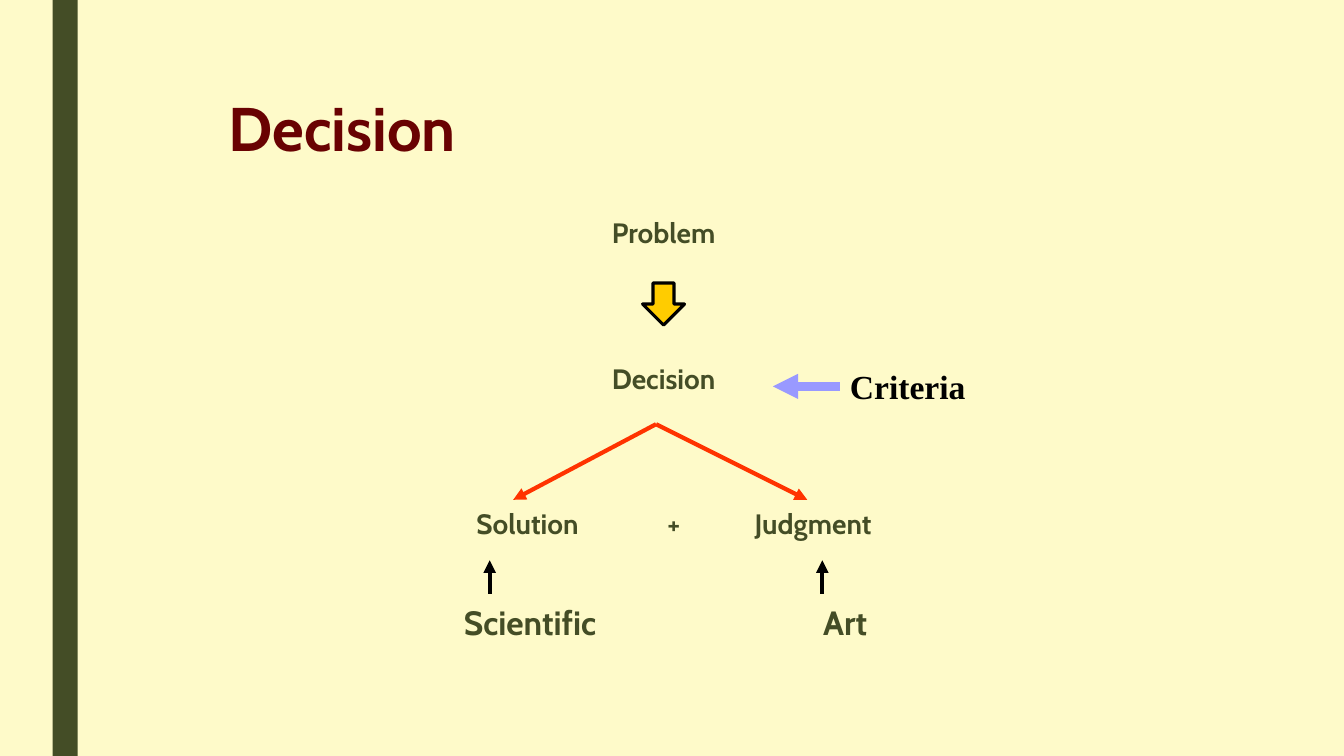
from lxml.etree import SubElement
from pptx import Presentation
from pptx.dml.color import RGBColor as Rgb
from pptx.enum.shapes import MSO_CONNECTOR as Connector, MSO_SHAPE as Shape
from pptx.enum.text import MSO_ANCHOR as Anchor, PP_ALIGN as Align
from pptx.oxml.ns import qn
from pptx.util import Inches, Pt

COLORS = {"paper": "FEFAC9", "olive": "444D26", "maroon": "690202", "gold": "FFCC00",
          "red": "FF3300", "black": "000000", "lilac": "9999FF"}

deck = Presentation()
deck.slide_width, deck.slide_height = Inches(13.33), Inches(7.5)
slide = deck.slides.add_slide(deck.slide_layouts[6])
slide.background.fill.solid()
slide.background.fill.fore_color.rgb = Rgb.from_string(COLORS["paper"])

# Grid of 160 columns by 90 rows
COL, ROW = deck.slide_width / 160, deck.slide_height / 90


def add_label(words, left, top, width, height, size, color, align=Align.CENTER, font="Cabin"):
    label = slide.shapes.add_textbox(int(left * COL), int(top * ROW),
                                     int(width * COL), int(height * ROW))
    frame = label.text_frame
    frame.word_wrap = True
    frame.vertical_anchor = Anchor.MIDDLE
    frame.paragraphs[0].alignment = align
    run = frame.paragraphs[0].add_run()
    run.text = words
    run.font.name, run.font.size, run.font.bold = font, Pt(size), True
    run.font.color.rgb = Rgb.from_string(COLORS[color])
    return label


def add_arrow(start, end, color, weight):
    arrow = slide.shapes.add_connector(
        Connector.STRAIGHT, int(start[0] * COL), int(start[1] * ROW),
        int(end[0] * COL), int(end[1] * ROW))
    arrow.line.color.rgb = Rgb.from_string(COLORS[color])
    arrow.line.width = Pt(weight)
    SubElement(arrow.line._get_or_add_ln(), qn("a:tailEnd"), type="triangle")
    SubElement(arrow._element.spPr, qn("a:effectLst"))
    return arrow


# Side band
band = slide.shapes.add_shape(Shape.RECTANGLE, int(6.25 * COL), 0, int(3 * COL), deck.slide_height)
band.shadow.inherit = False
band.fill.solid()
band.fill.fore_color.rgb = Rgb.from_string(COLORS["olive"])
band.line.fill.background()

# Title
add_label("Decision", 26, 10.8, 108, 8.6, 44, "maroon", Align.LEFT)

# Steps of the decision: words, centre column, centre row, size
FIRST, PITCH = 27.7, 17.3
SOURCES = 74.1
steps = [
    ("Problem", 79, FIRST, 20),
    ("Decision", 79, FIRST + PITCH, 20),
    ("Solution", 62.8, FIRST + 2 * PITCH, 20),
    ("+", 80.2, FIRST + 2 * PITCH, 20),
    ("Judgment", 96.8, FIRST + 2 * PITCH, 20),
    ("Scientific", 63.1, SOURCES, 24),
    ("Art", 100.6, SOURCES, 24),
]
STEP_W, STEP_H = 24, 6
for words, center, middle, size in steps:
    add_label(words, center - STEP_W / 2, middle - STEP_H / 2, STEP_W, STEP_H, size, "olive")

# Block arrow from problem to decision
block = slide.shapes.add_shape(Shape.DOWN_ARROW, int(76.5 * COL), int(33.7 * ROW),
                               int(5 * COL), int(5 * ROW))
block.shadow.inherit = False
block.fill.solid()
block.fill.fore_color.rgb = Rgb.from_string(COLORS["gold"])
block.line.color.rgb = Rgb.from_string(COLORS["black"])
block.line.width = Pt(2.25)

# Branches to solution and judgment
for tip in (61.1, 96.1):
    add_arrow((78.1, 50.5), (tip, 59.5), "red", 3)

# Arrows up from scientific and art
for column in (58.3, 97.9):
    add_arrow((column, 70.7), (column, 66.7), "black", 3)

# Criteria feeding the decision
criteria = add_label("Criteria", 100, 43, 30, 6, 24, "black", Align.LEFT, "Times New Roman")
feed = add_arrow((100, 46), (92, 46), "lilac", 6)
feed.begin_connect(criteria, 1)

deck.save("out.pptx")
